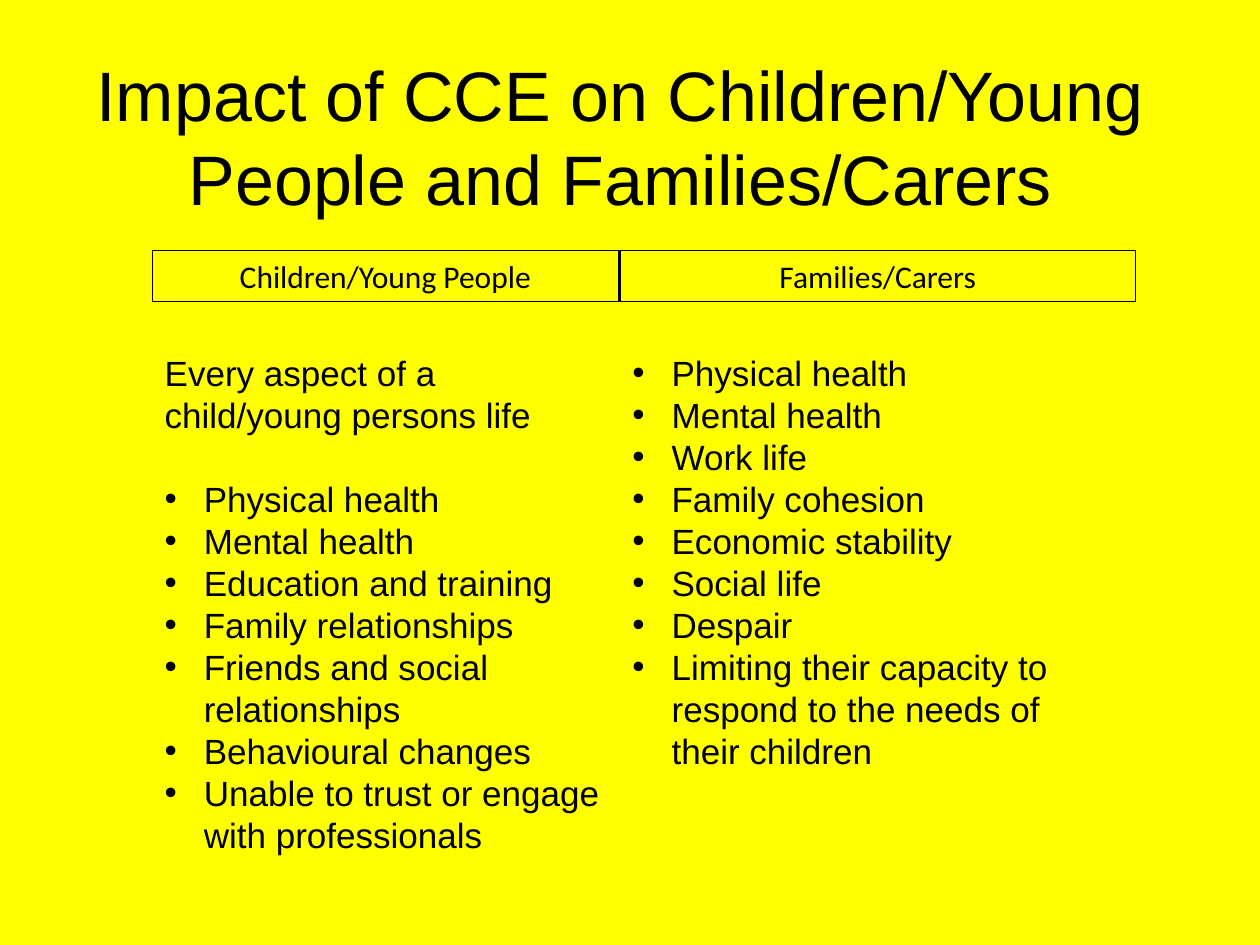
import pptx
import pptx.dml.color
import pptx.enum.shapes
import pptx.enum.text
import pptx.oxml.ns
import pptx.util
from lxml import etree

Cm = pptx.util.Cm
Pt = pptx.util.Pt
COLOURS = {"background": "FFFF00", "ink": "000000"}
COLUMNS = [
    {
        "heading": "Children/Young People",
        "left": 3.07,
        "heading_width": 9.4,
        "list_height": 10.26,
        "intro": "Every aspect of a child/young persons life",
        "items": [
            "Physical health",
            "Mental health",
            "Education and training",
            "Family relationships",
            "Friends and social relationships",
            "Behavioural changes",
            "Unable to trust or engage with professionals",
        ],
    },
    {
        "heading": "Families/Carers",
        "left": 12.5,
        "heading_width": 10.39,
        "list_height": 9.5,
        "intro": None,
        "items": [
            "Physical health",
            "Mental health",
            "Work life",
            "Family cohesion",
            "Economic stability",
            "Social life",
            "Despair",
            "Limiting their capacity to respond to the needs of their children",
        ],
    },
]


class SlideBuilder:
    body_font = "Arial"
    heading_font = "Calibri"
    title_size = 40
    heading_size = 18
    body_size = 20
    line_ratio = 1.2
    indent = Cm(0.79)

    def __init__(self, slide):
        self.slide = slide
        fill = slide.background.fill
        fill.solid()
        fill.fore_color.rgb = self.colour("background")

    def colour(self, name):
        return pptx.dml.color.RGBColor.from_string(COLOURS[name])

    def style(self, paragraph, font_name, size):
        paragraph.font.name = font_name
        paragraph.font.size = Pt(size)
        paragraph.font.color.rgb = self.colour("ink")

    def text_frame(self, left, top, width, height):
        shape = self.slide.shapes.add_textbox(Cm(left), Cm(top), Cm(width), Cm(height))
        shape.text_frame.word_wrap = True
        return shape.text_frame

    def title(self, text, left, top, width, height):
        paragraph = self.text_frame(left, top, width, height).paragraphs[0]
        paragraph.text = text
        paragraph.alignment = pptx.enum.text.PP_ALIGN.CENTER
        paragraph.line_spacing = Pt(self.title_size * self.line_ratio)
        self.style(paragraph, self.body_font, self.title_size)

    def heading(self, text, left, top, width, height):
        shape = self.slide.shapes.add_shape(
            pptx.enum.shapes.MSO_SHAPE.RECTANGLE, Cm(left), Cm(top), Cm(width), Cm(height)
        )
        shape.shadow.inherit = False
        shape.fill.background()
        shape.line.color.rgb = self.colour("ink")
        shape.line.width = Pt(0.75)
        shape.text_frame.word_wrap = True
        shape.text_frame.vertical_anchor = pptx.enum.text.MSO_ANCHOR.TOP
        paragraph = shape.text_frame.paragraphs[0]
        paragraph.text = text
        paragraph.alignment = pptx.enum.text.PP_ALIGN.CENTER
        self.style(paragraph, self.heading_font, self.heading_size)

    def bullet(self, paragraph):
        properties = paragraph._p.get_or_add_pPr()
        properties.set("marL", str(self.indent))
        properties.set("indent", str(-self.indent))
        qualified_name = pptx.oxml.ns.qn
        etree.SubElement(properties, qualified_name("a:buFont")).set("typeface", self.body_font)
        etree.SubElement(properties, qualified_name("a:buChar")).set("char", "•")

    def bullet_list(self, intro, items, left, top, width, height):
        frame = self.text_frame(left, top, width, height)
        line_height = Pt(self.body_size * self.line_ratio)
        frame.margin_top = Cm(0.13) + line_height
        texts = [intro, *items] if intro else items
        for index, text in enumerate(texts):
            paragraph = frame.add_paragraph() if index else frame.paragraphs[0]
            paragraph.text = text
            paragraph.line_spacing = line_height
            if text != intro:
                self.bullet(paragraph)
            if intro and index == 1:
                paragraph.space_before = line_height
            self.style(paragraph, self.body_font, self.body_size)


def main():
    presentation = pptx.Presentation()
    presentation.slide_width = Cm(25.4)
    presentation.slide_height = Cm(19.05)
    builder = SlideBuilder(presentation.slides.add_slide(presentation.slide_layouts[6]))
    builder.title(
        "Impact of CCE on Children/Young People and Families/Carers", 1.3, 0.91, 22.4, 3.68
    )
    for column in COLUMNS:
        builder.heading(column["heading"], column["left"], 5.05, column["heading_width"], 1.03)
    for column in COLUMNS:
        builder.bullet_list(
            column["intro"], column["items"], column["left"], 6.1, 9.4, column["list_height"]
        )
    presentation.save("out.pptx")


if __name__ == "__main__":
    main()
